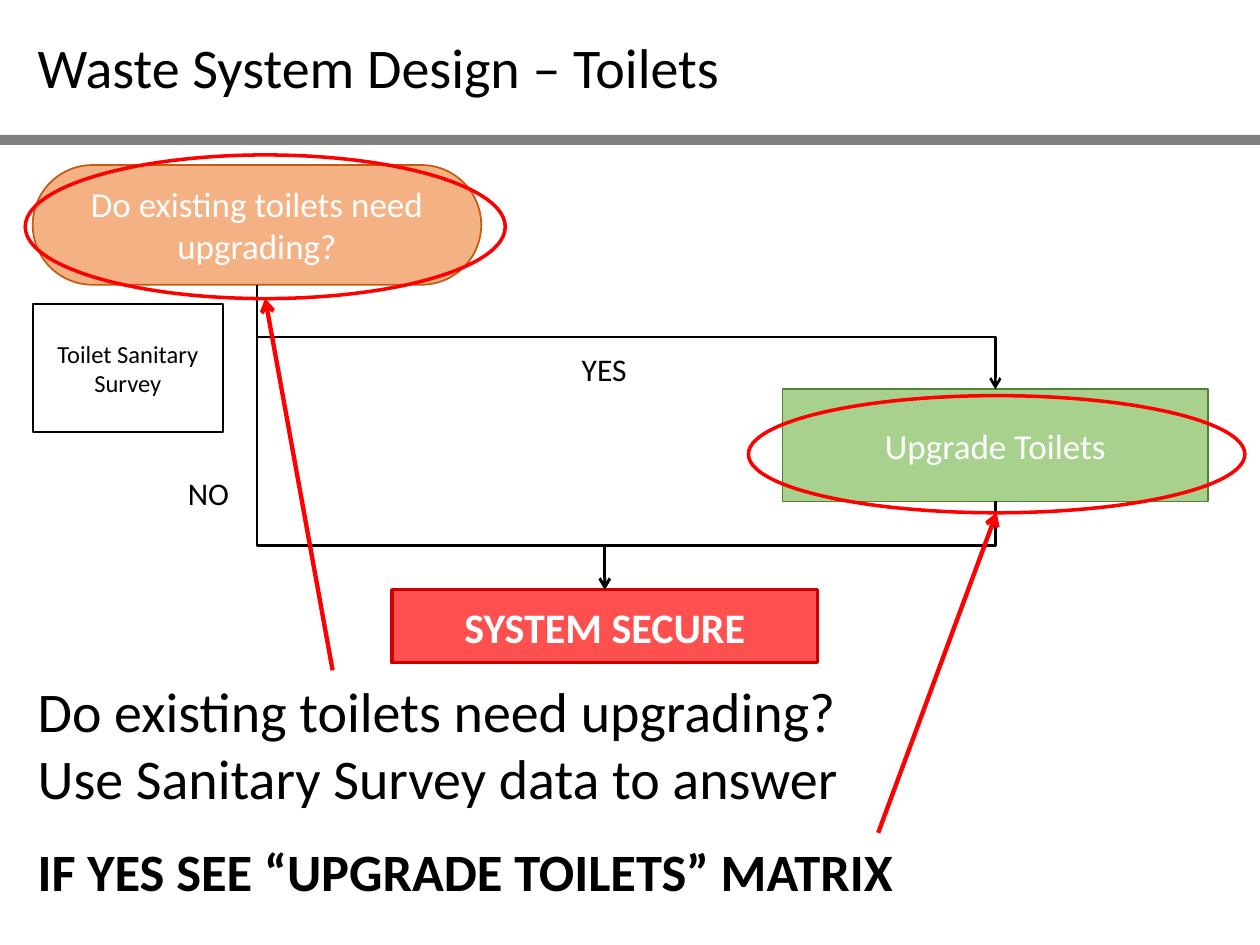
from collections import namedtuple

from lxml import etree
from pptx import Presentation
from pptx.dml.color import RGBColor
from pptx.enum.shapes import MSO_CONNECTOR, MSO_SHAPE
from pptx.enum.text import MSO_ANCHOR, MSO_AUTO_SIZE, PP_ALIGN
from pptx.oxml.ns import qn
from pptx.util import Inches, Pt

RECTANGLE, ROUNDED = MSO_SHAPE.RECTANGLE, MSO_SHAPE.ROUNDED_RECTANGLE
OVAL = MSO_SHAPE.OVAL
STRAIGHT, ELBOW = MSO_CONNECTOR.STRAIGHT, MSO_CONNECTOR.ELBOW
LEFT, CENTER = PP_ALIGN.LEFT, PP_ALIGN.CENTER
TOP, MIDDLE = MSO_ANCHOR.TOP, MSO_ANCHOR.MIDDLE
TOP_SIDE, BOTTOM_SIDE = 0, 2

FONT = "Calibri"
COLUMNS, ROWS = 100, 75
CELL = Inches(10) // COLUMNS
COLORS = {
    "black": "000000", "white": "FFFFFF", "gray": "808080",
    "orange": "F4B183", "dark_orange": "C55A11",
    "green": "A9D18E", "dark_green": "548235",
    "red": "FF5050", "dark_red": "CC0000", "highlight": "FF0000",
}

Box = namedtuple("Box", "column row width height")


def color(name):
    return RGBColor.from_string(COLORS[name])


def inside(box, column, row, width, height):
    return Box(box.column + column, box.row + row, width, height)


def to_lengths(values):
    return [round(value * CELL) for value in values]


def write(shape, text, size=20, ink="black", bold=False, align=CENTER, anchor=MIDDLE):
    frame = shape.text_frame
    frame.word_wrap = True
    frame.vertical_anchor = anchor
    frame.text = text
    for paragraph in frame.paragraphs:
        paragraph.alignment = align
        font = paragraph.runs[0].font
        font.name, font.size, font.bold = FONT, Pt(size), bold
        font.color.rgb = color(ink)


def add_text(slide, box, text, **text_format):
    shape = slide.shapes.add_textbox(*to_lengths(box))
    write(shape, text, **text_format)
    shape.text_frame.auto_size = MSO_AUTO_SIZE.SHAPE_TO_FIT_TEXT


def add_block(slide, kind, box, fill=None, line=None, width=1):
    shape = slide.shapes.add_shape(kind, *to_lengths(box))
    shape.shadow.inherit = False
    if fill:
        shape.fill.solid()
        shape.fill.fore_color.rgb = color(fill)
    else:
        shape.fill.background()
    if line:
        shape.line.color.rgb = color(line)
        shape.line.width = Pt(width)
    else:
        shape.line.fill.background()
    return shape


def add_arrow(slide, kind, start, end, ink, width):
    connector = slide.shapes.add_connector(kind, *start, *end)
    connector.line.color.rgb = color(ink)
    connector.line.width = Pt(width)
    line = connector.line._get_or_add_ln()
    etree.SubElement(line, qn("a:tailEnd"), type="arrow")
    etree.SubElement(connector.element.spPr, qn("a:effectLst"))
    return connector


def bottom_middle(shape):
    return shape.left + shape.width // 2, shape.top + shape.height


def add_route(slide, source, target, turn=0.5):
    start = bottom_middle(source)
    end = target.left + target.width // 2, target.top
    connector = add_arrow(slide, ELBOW, start, end, "black", 1.5)
    connector.begin_connect(source, BOTTOM_SIDE)
    connector.end_connect(target, TOP_SIDE)

    across, down = abs(end[0] - start[0]), end[1] - start[1]
    connector.left = (start[0] + end[0] - down) // 2
    connector.top = (start[1] + end[1] - across) // 2
    connector.width, connector.height = down, across
    rightward = end[0] > start[0]
    transform = connector.element.spPr.find(qn("a:xfrm"))
    transform.set("rot", str((270 if rightward else 90) * 60000))
    transform.set("flipH", "1" if rightward else "0")
    geometry = connector.element.spPr.find(qn("a:prstGeom"))
    adjustments = geometry.find(qn("a:avLst"))
    if adjustments is None:
        adjustments = etree.SubElement(geometry, qn("a:avLst"))
    etree.SubElement(adjustments, qn("a:gd"), name="adj1", fmla=f"val {round(turn * 100000)}")


def add_header(slide, box):
    add_block(slide, RECTANGLE, inside(box, 0, 10.7, box.width, 0.8), "gray")
    add_text(slide, inside(box, 2, 2.1, 81.1, 6.4), "Waste System Design – Toilets",
             size=32, align=LEFT, anchor=TOP)


def add_flowchart(slide, box):
    question = add_block(slide, ROUNDED, inside(box, 0, 0, 35.6, 9.5), "orange", "dark_orange")
    question.adjustments[0] = 0.5
    write(question, "Do existing toilets need upgrading?", ink="white")
    survey = add_block(slide, RECTANGLE, inside(box, 0, 11, 15.1, 10.2), line="black")
    write(survey, "Toilet Sanitary Survey", size=14)
    upgrade = add_block(slide, RECTANGLE, inside(box, 59.5, 17.8, 33.8, 8.9), "green", "dark_green")
    write(upgrade, "Upgrade Toilets", ink="white")
    secure = add_block(slide, RECTANGLE, inside(box, 28.5, 33.7, 33.8, 5.8), "red", "dark_red", 2)
    write(secure, "SYSTEM SECURE", size=24, ink="white", bold=True)

    question_bottom, upgrade_bottom = bottom_middle(question)[1], bottom_middle(upgrade)[1]
    shared_turn = (secure.top + upgrade_bottom) / 2
    add_route(slide, question, upgrade)
    add_route(slide, question, secure,
              (shared_turn - question_bottom) / (secure.top - question_bottom))
    add_route(slide, upgrade, secure)
    for text, column, row in (("YES", 41.6, 13.5), ("NO", 10.2, 23.4)):
        add_text(slide, inside(box, column, row, 7.5, 5.3), text, size=18)


def add_callout(slide, box, ring_box, arrow_column, text, **text_format):
    add_text(slide, box, text, align=LEFT, anchor=TOP, **text_format)
    ring = add_block(slide, OVAL, ring_box, line="highlight", width=2)
    start = to_lengths((box.column + arrow_column, box.row))
    add_arrow(slide, STRAIGHT, start, bottom_middle(ring), "highlight", 2.5)


def main():
    presentation = Presentation()
    presentation.slide_width, presentation.slide_height = COLUMNS * CELL, ROWS * CELL
    slide = presentation.slides.add_slide(presentation.slide_layouts[6])
    add_header(slide, Box(0, 0, COLUMNS, 11.5))
    add_flowchart(slide, Box(2.6, 13.1, 93.3, 39.5))
    add_callout(slide, Box(2, 53.2, 81.1, 11.8), Box(2, 12.3, 38.1, 11.4), 24.4,
                "Do existing toilets need upgrading?\nUse Sanitary Survey data to answer", size=32)
    add_callout(slide, Box(2, 66.1, 96.1, 6.1), Box(59.4, 31.4, 39.4, 9.3), 67.7,
                "IF YES SEE “UPGRADE TOILETS” MATRIX", size=30, bold=True)
    presentation.save("out.pptx")


if __name__ == "__main__":
    main()
